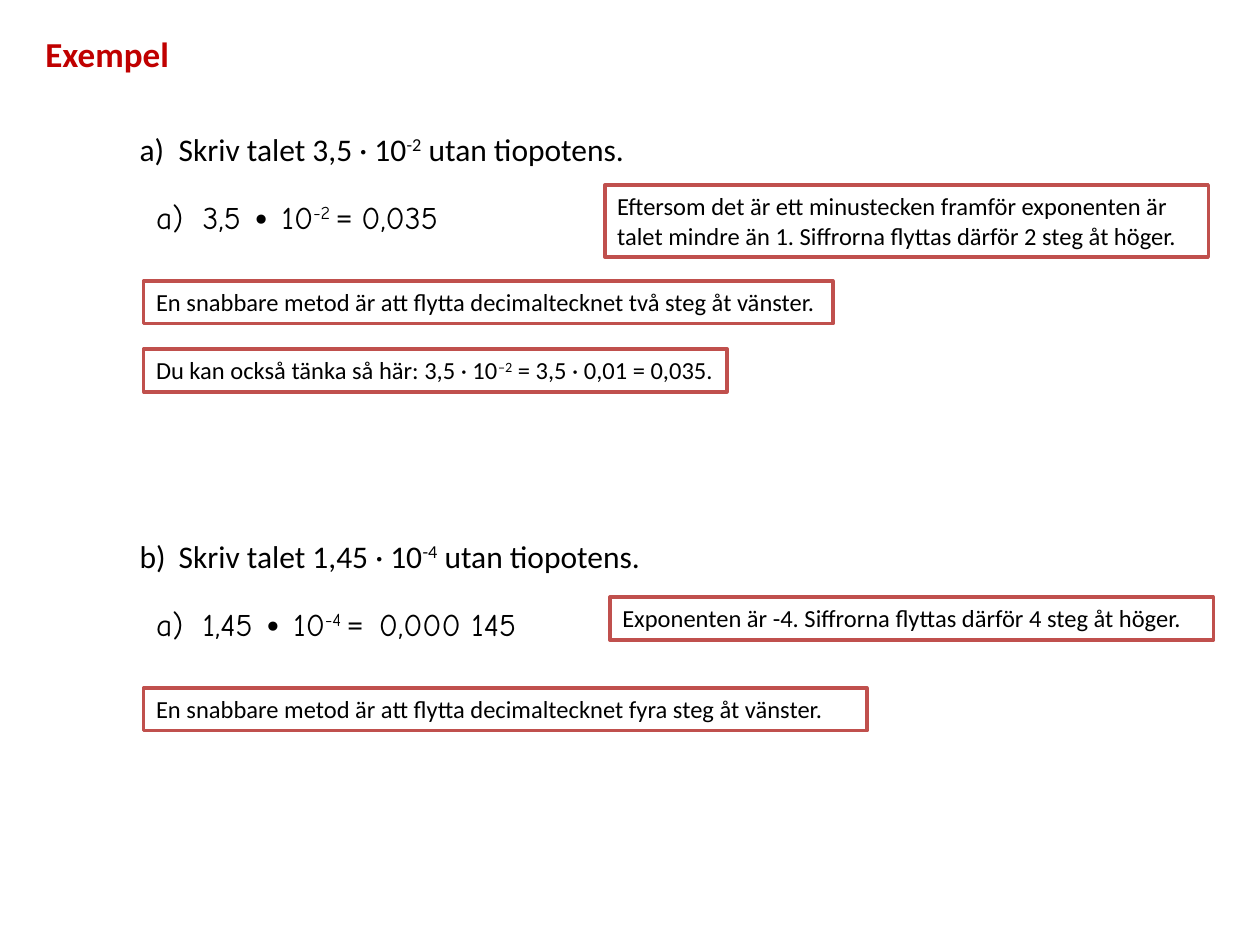
from dataclasses import dataclass

from pptx import Presentation
from pptx.dml.color import RGBColor as RGB
from pptx.enum.shapes import MSO_SHAPE as SHAPE
from pptx.enum.text import MSO_ANCHOR as ANCHOR, MSO_AUTO_SIZE as FIT, PP_ALIGN as ALIGN
from pptx.util import Inches, Pt


@dataclass(frozen=True)
class Theme:
    """Colours, fonts and type sizes."""
    ink: RGB = RGB(0, 0, 0)
    heading: RGB = RGB(0xC0, 0, 0)
    border: RGB = RGB(0xC0, 0x50, 0x4D)
    paper: RGB = RGB(0xFF, 0xFF, 0xFF)
    body: str = "Calibri"
    hand: str = "Comic Neue"
    title_size: int = 20
    task_size: int = 18
    note_size: int = 14


class Deck:
    """Holds the theme and current slide, and draws each kind of element."""

    def __init__(self, prs, theme):
        """Add a title-only slide."""
        self.theme = theme
        self.s = prs.slides.add_slide(prs.slide_layouts[5])

    def set_text(self, sp, text, size, font, tail_font=None, indent=0):
        """Fill a shape with one paragraph, raising what stands between carets."""
        tf = sp.text_frame
        tf.word_wrap = True
        tf.auto_size = FIT.NONE
        tf.vertical_anchor = ANCHOR.TOP
        p = tf.paragraphs[0]
        p.alignment = ALIGN.LEFT
        p.font.name = font
        p.font.size = Pt(size)
        p.font.color.rgb = self.theme.ink
        if indent:
            pPr = p._p.get_or_add_pPr()
            pPr.set("marL", str(Inches(indent)))
            pPr.set("indent", str(-Inches(indent)))
        for i, part in enumerate(text.split("^")):
            r = p.add_run()
            r.text = part
            if i % 2:
                r._r.get_or_add_rPr().set("baseline", "30000")
            elif i and tail_font:
                r.font.name = tail_font
        return p

    def title(self, text, x, y, w, h):
        """Place and format the slide title."""
        sp = self.s.shapes.title
        sp.left, sp.top, sp.width, sp.height = map(Inches, (x, y, w, h))
        p = self.set_text(sp, text, self.theme.title_size, self.theme.body)
        p.font.bold = True
        p.font.color.rgb = self.theme.heading

    def text(self, text, x, y, w, font, **style):
        """Add one line of plain text."""
        sp = self.s.shapes.add_textbox(*map(Inches, (x, y, w, 0.4)))
        self.set_text(sp, text, self.theme.task_size, font, **style)

    def note(self, text, x, y, w, h=0.34):
        """Add a framed note."""
        sp = self.s.shapes.add_shape(SHAPE.RECTANGLE, *map(Inches, (x, y, w, h)))
        sp.shadow.inherit = False
        sp.fill.solid()
        sp.fill.fore_color.rgb = self.theme.paper
        sp.line.color.rgb = self.theme.border
        sp.line.width = Pt(2)
        self.set_text(sp, text, self.theme.note_size, self.theme.body)

    def example(self, y, task, working, answer, answer_x, answer_w):
        """Add a task with its worked answer below."""
        t = self.theme
        self.text(task, 1.01, y, 4.31, t.body, indent=0.31)
        self.text(working, 1.14, y + 0.54, 1.92, t.hand, tail_font=t.body, indent=0.37)
        self.text(answer, answer_x, y + 0.54, answer_w, t.hand)


def main():
    """Build and save the slide."""
    prs = Presentation()
    prs.slide_width, prs.slide_height = Inches(10), Inches(7.5)
    deck = Deck(prs, Theme())
    deck.title("Exempel", 0.26, 0.21, 1.27, 0.44)

    deck.example(0.98, "a)\tSkriv talet 3,5 · 10^-2^ utan tiopotens.",
                 "a)\t3,5 ∙ 10^-2 ^=", "0,035", 2.77, 0.85)
    deck.note("Eftersom det är ett minustecken framför exponenten är talet mindre än 1. "
              "Siffrorna flyttas därför 2 steg åt höger.", 4.8, 1.47, 4.79, 0.57)
    deck.note("En snabbare metod är att flytta decimaltecknet två steg åt vänster.",
              1.14, 2.23, 5.47)
    deck.note("Du kan också tänka så här: 3,5 · 10^–2^ = 3,5 · 0,01 = 0,035.",
              1.14, 2.77, 4.63)

    deck.example(4.21, "b)\tSkriv talet 1,45 · 10^-4^ utan tiopotens.",
                 "a)\t1,45 ∙ 10^-4 ^=", "0,000 145", 2.91, 1.33)
    deck.note("Exponenten är -4. Siffrorna flyttas därför 4 steg åt höger.",
              4.84, 4.74, 4.79)
    deck.note("En snabbare metod är att flytta decimaltecknet fyra steg åt vänster.",
              1.14, 5.46, 5.74)
    prs.save("out.pptx")


if __name__ == "__main__":
    main()
